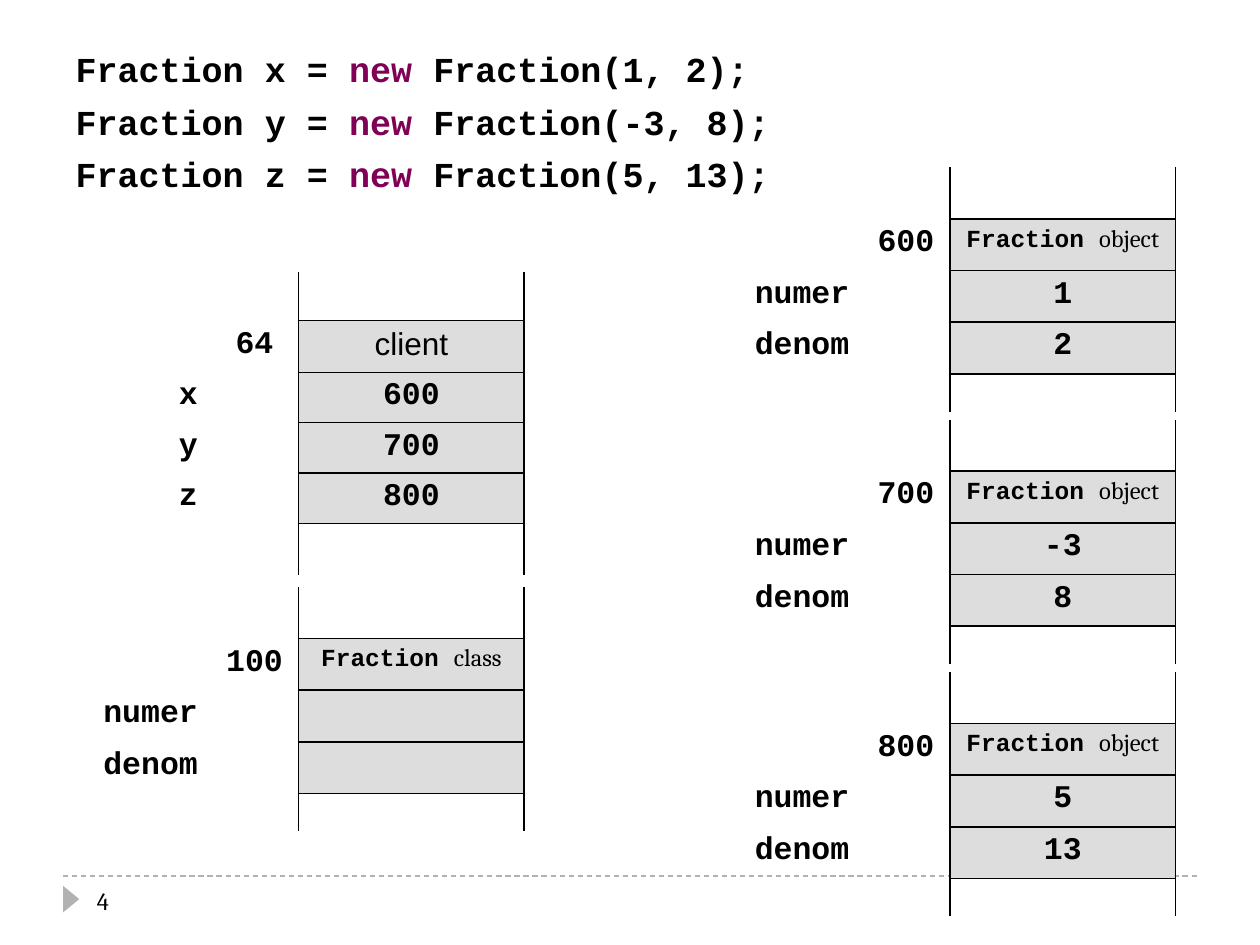
from dataclasses import dataclass

from lxml import etree
from pptx import Presentation
from pptx.dml.color import RGBColor
from pptx.enum.dml import MSO_LINE
from pptx.enum.shapes import MSO_CONNECTOR, MSO_SHAPE
from pptx.enum.text import MSO_ANCHOR, PP_ALIGN
from pptx.oxml.ns import qn
from pptx.util import Inches, Pt

CENTER, RIGHT = PP_ALIGN.CENTER, PP_ALIGN.RIGHT
MIDDLE = MSO_ANCHOR.MIDDLE
DASH = MSO_LINE.DASH
TRIANGLE = MSO_SHAPE.ISOSCELES_TRIANGLE
STRAIGHT = MSO_CONNECTOR.STRAIGHT
NO_STYLE = "{2D5ABB26-0587-4C30-8999-92F81FD0307C}"
WIDTH, HEIGHT = Inches(10), Inches(7.5)
ROW = Inches(0.41)
COLUMNS = (0.117, 0.07, 0.179)
LEFT, RIGHT_SIDE = 0.05, 0.567


@dataclass(frozen=True)
class Theme:
    ink: str = "000000"
    keyword: str = "7F0055"
    cell: str = "DDDDDD"
    footer: str = "B2B2B2"
    code: str = "Courier New"
    serif: str = "Cambria"
    sans: str = "Arial"
    code_size: int = 20
    cell_size: int = 18
    small_size: int = 14
    empty_size: int = 10
    border: int = 1


@dataclass(frozen=True)
class Run:
    text: str
    font: str
    size: int
    bold: bool = True
    color: str = "000000"


@dataclass(frozen=True)
class Memory:
    x: float
    y: float
    address: str
    title: tuple[Run, ...]
    fields: tuple[tuple[str, str], ...]
    rows: tuple[float, ...] = (1, 1, 1, 1, 0.73)
    merged: bool = False


T = Theme()


def across(share: float) -> int:
    return round(WIDTH * share)


def down(share: float) -> int:
    return round(HEIGHT * share)


def code(text: str) -> Run:
    return Run(text, T.code, T.cell_size)


def heading(kind: str) -> tuple[Run, ...]:
    return (Run("Fraction ", T.code, T.small_size),
            Run(kind, T.serif, T.small_size, False))


def write(p, runs: tuple[Run, ...], align=None) -> None:
    p.alignment = align
    for run in runs:
        r = p.add_run()
        r.text = run.text
        r.font.name, r.font.size, r.font.bold = run.font, Pt(run.size), run.bold
        r.font.color.rgb = RGBColor.from_string(run.color)


def set_borders(cell, sides: str) -> None:
    tc_pr = cell._tc.get_or_add_tcPr()
    for side in "LRTB":
        ln = etree.SubElement(tc_pr, qn(f"a:ln{side}"), w=str(Pt(T.border)))
        if side in sides:
            fill = etree.SubElement(ln, qn("a:solidFill"))
            etree.SubElement(fill, qn("a:srgbClr"), val=T.ink)
        else:
            etree.SubElement(ln, qn("a:noFill"))


def fill_cell(cell, runs: tuple[Run, ...], align, sides: str) -> None:
    p = cell.text_frame.paragraphs[0]
    write(p, runs, align)
    if not runs:
        etree.SubElement(p._p, qn("a:endParaRPr"), sz=str(T.empty_size * 100))
    set_borders(cell, sides)
    if sides == "LRTB":
        cell.fill.solid()
        cell.fill.fore_color.rgb = RGBColor.from_string(T.cell)
    else:
        cell.fill.background()


def draw_memory(slide, m: Memory) -> None:
    frame = slide.shapes.add_table(
        len(m.rows), len(COLUMNS), across(m.x), down(m.y),
        across(sum(COLUMNS)), round(ROW * sum(m.rows)))
    table = frame.table
    table.first_row = table.horz_banding = False
    table._tbl.tblPr.find(qn("a:tableStyleId")).text = NO_STYLE
    for column, share in zip(table.columns, COLUMNS):
        column.width = across(share)
    for row, units in zip(table.rows, m.rows):
        row.height = round(ROW * units)

    lines = [((), (), (), "LRB"), ((), (code(m.address),), m.title, "LRTB")]
    for name, value in m.fields:
        lines.append(((code(name),), (), (code(value),) if value else (), "LRTB"))
    lines.append(((), (), (), "LRT"))
    for i, (name, address, content, sides) in enumerate(lines):
        fill_cell(table.cell(i, 0), name, RIGHT, "")
        fill_cell(table.cell(i, 1), address, CENTER, "R")
        fill_cell(table.cell(i, 2), content, CENTER, sides)
    if m.merged:
        table.cell(2, 1).merge(table.cell(1 + len(m.fields), 1))


def draw_code(slide, statements: tuple[tuple[str, str], ...]) -> None:
    title = slide.shapes.title
    title._element.getparent().remove(title._element)
    sp = slide.placeholders[1]
    sp.left, sp.top = across(0.05), down(0.044)
    sp.width, sp.height = across(0.9), down(0.853)
    tf = sp.text_frame
    for i, (name, args) in enumerate(statements):
        p = tf.add_paragraph() if i else tf.paragraphs[0]
        write(p, (Run(f"Fraction {name} = ", T.code, T.code_size),
                  Run("new", T.code, T.code_size, color=T.keyword),
                  Run(f" Fraction({args});", T.code, T.code_size)))
        p.space_before = Pt(6)
        p_pr = p._p.get_or_add_pPr()
        p_pr.set("marL", str(Inches(0.3)))
        p_pr.set("indent", str(-Inches(0.3)))
        etree.SubElement(p_pr, qn("a:buNone"))


def draw_footer(slide, number: str) -> None:
    gray = RGBColor.from_string(T.footer)
    y = down(0.927)
    line = slide.shapes.add_connector(STRAIGHT, across(0.05), y, across(0.95), y)
    line.line.color.rgb, line.line.width = gray, Pt(0.75)
    line.line.dash_style = DASH
    etree.SubElement(line._element.spPr, qn("a:effectLst"))
    sp = slide.shapes.add_shape(TRIANGLE, across(0.046), down(0.943),
                                across(0.021), down(0.017))
    sp.rotation = 90
    sp.shadow.inherit = False
    sp.fill.solid()
    sp.fill.fore_color.rgb = gray
    sp.line.fill.background()
    tf = slide.shapes.add_textbox(across(0.067), y, across(0.217),
                                  down(0.053)).text_frame
    tf.word_wrap, tf.vertical_anchor = True, MIDDLE
    write(tf.paragraphs[0], (Run(number, T.serif, T.small_size, False),))


def main() -> None:
    prs = Presentation()
    prs.slide_width, prs.slide_height = WIDTH, HEIGHT
    slide = prs.slides.add_slide(prs.slide_layouts[1])
    draw_footer(slide, "4")
    draw_code(slide, (("x", "1, 2"), ("y", "-3, 8"), ("z", "5, 13")))
    client = (Run("client", T.sans, T.cell_size, False),)
    draw_memory(slide, Memory(
        LEFT, 0.288, "64", client, (("x", "600"), ("y", "700"), ("z", "800")),
        (0.94, 1, 0.94, 0.94, 0.94, 1), True))
    draw_memory(slide, Memory(LEFT, 0.621, "100", heading("class"),
                              (("numer", ""), ("denom", ""))))
    objects = (("600", "1", "2"), ("700", "-3", "8"), ("800", "5", "13"))
    for i, (address, numer, denom) in enumerate(objects):
        draw_memory(slide, Memory(RIGHT_SIDE, 0.177 + i * 0.267, address,
                                  heading("object"),
                                  (("numer", numer), ("denom", denom))))
    prs.save("out.pptx")


if __name__ == "__main__":
    main()
